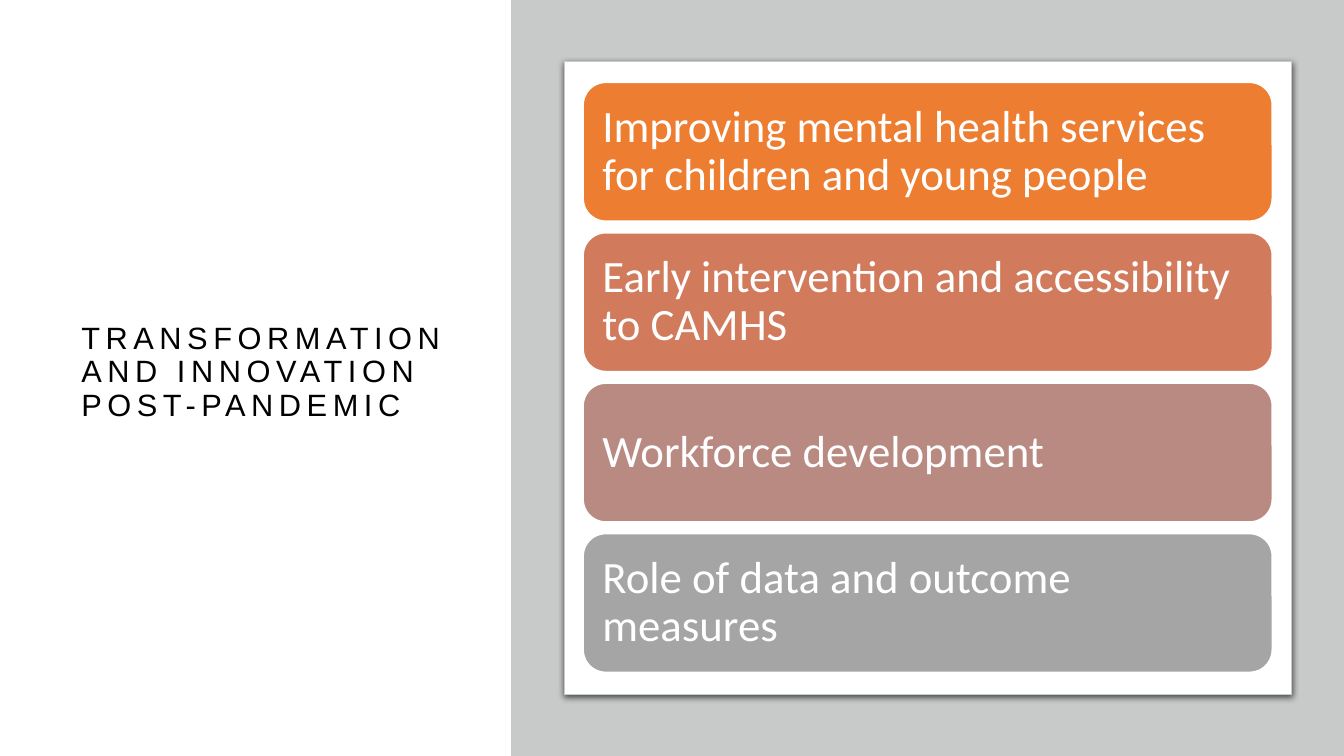
from dataclasses import dataclass

from lxml.etree import SubElement
from pptx import Presentation
from pptx.dml.color import RGBColor
from pptx.enum.shapes import MSO_SHAPE
from pptx.enum.text import MSO_ANCHOR, PP_ALIGN
from pptx.oxml.ns import qn
from pptx.util import Cm, Pt


@dataclass(frozen=True)
class Theme:
    black: str = "000000"
    white: str = "FFFFFF"
    gray: str = "C8CACA"
    cards: tuple = ("ED7D31", "D17B5C", "B98A82", "A5A5A5")
    title: int = 22
    body: int = 32
    track: int = 4


THEME = Theme()
TOPICS = (
    "Improving mental health services for children and young people",
    "Early intervention and accessibility to CAMHS",
    "Workforce development",
    "Role of data and outcome measures",
)


def apply(item, values):
    for name, value in values.items():
        setattr(item, name, value)


def write(shape, text, face, size, color, inset):
    frame = shape.text_frame
    apply(frame, {
        "word_wrap": True,
        "vertical_anchor": MSO_ANCHOR.MIDDLE,
        "margin_left": Cm(inset),
        "margin_right": Cm(inset),
        "margin_top": Cm(inset),
        "margin_bottom": Cm(inset),
    })
    para = frame.paragraphs[0]
    apply(para, {"alignment": PP_ALIGN.LEFT, "line_spacing": 0.9})
    run = para.add_run()
    run.text = text
    apply(run.font, {"name": face, "size": Pt(size)})
    run.font.color.rgb = RGBColor.from_string(color)
    return run


def add_title(slide, text, box):
    shape = slide.shapes.add_textbox(*map(Cm, box))
    run = write(shape, text, "Arial", THEME.title, THEME.black, 0.25)
    run.font._element.set("spc", str(THEME.track * 100))


def add_block(slide, kind, box, fill, line=None, width=0):
    shape = slide.shapes.add_shape(kind, *map(Cm, box))
    shape.shadow.inherit = False
    shape.fill.solid()
    shape.fill.fore_color.rgb = RGBColor.from_string(fill)
    if line:
        shape.line.color.rgb = RGBColor.from_string(line)
        shape.line.width = Pt(width)
    else:
        shape.line.fill.background()
    return shape


def add_shadow(shape):
    effects = shape._element.spPr.find(qn("a:effectLst"))
    outer = SubElement(effects, qn("a:outerShdw"), {
        "blurRad": str(Pt(4.5)), "dist": str(Pt(1.5)),
        "dir": "5400000", "algn": "t", "rotWithShape": "0",
    })
    color = SubElement(outer, qn("a:srgbClr"), val=THEME.black)
    SubElement(color, qn("a:alpha"), val="63000")


def add_cards(slide, left, top, width, height, pitch):
    for row, (text, fill) in enumerate(zip(TOPICS, THEME.cards)):
        box = (left, top + row * pitch, width, height)
        card = add_block(slide, MSO_SHAPE.ROUNDED_RECTANGLE, box, fill,
                         THEME.white, 2)
        write(card, text, "Calibri", THEME.body, THEME.white, 0.33)


def main():
    deck = Presentation()
    apply(deck, {"slide_width": Cm(33.87), "slide_height": Cm(19.05)})
    slide = deck.slides.add_slide(deck.slide_layouts[6])
    add_title(slide, "TRANSFORMATION AND INNOVATION POST-PANDEMIC",
              (1.8, 1.75, 10.19, 15.29))
    add_block(slide, MSO_SHAPE.RECTANGLE, (12.88, 0, 20.99, 19.05), THEME.gray)
    panel = add_block(slide, MSO_SHAPE.ROUNDED_RECTANGLE,
                      (14.22, 1.55, 18.34, 15.95), THEME.white, THEME.gray, 0.75)
    panel.adjustments[0] = 0
    add_shadow(panel)
    add_cards(slide, 14.68, 2.06, 17.4, 3.53, 3.79)
    deck.save("out.pptx")


if __name__ == "__main__":
    main()
